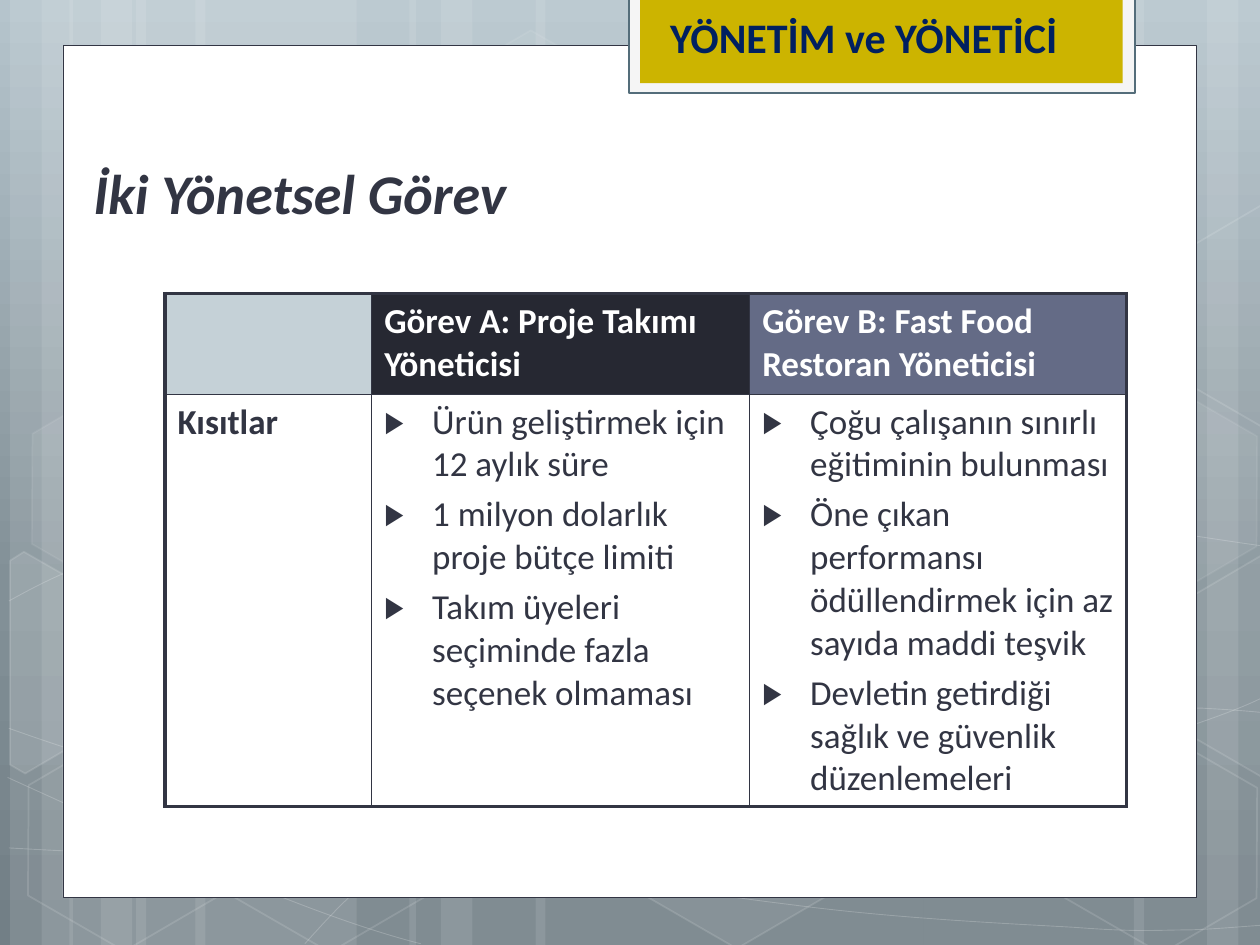
from copy import deepcopy

from lxml import etree
from pptx import Presentation
from pptx import util as u
from pptx.dml.color import RGBColor
from pptx.enum import shapes, text
from pptx.oxml.ns import qn

PX = 9144  # EMU per px, 100 px to the inch
FONT = "Calibri"
COLORS = {
    "white": "FFFFFF", "ink": "323543", "navy": "002060", "gold": "CCB400",
    "frame": "F5F5F5", "frame_line": "546D7A", "corner": "C5D1D7",
    "task_a": "262832", "task_b": "646B86",
}
BACKDROP = [(0, "B5C4CC"), (0.62, "829097"), (1, "727F86")]

# Vertical bands: left, width
BANDS = [(108, 175), (8, 50), (33, 83), (155, 175), (55, 50), (80, 83),
         (733, 175), (958, 50), (900, 83), (425, 308), (325, 50), (350, 83)]
# Curves: start point, then three Bezier points per segment
CURVES = [
    [(7, 673), (61, 676), (115, 679), (190, 678), (265, 677), (358, 675), (458, 665),
     (558, 655), (700, 636), (792, 617), (883, 598), (977, 568), (1007, 551)],
    [(7, 477), (36, 461), (65, 446), (121, 431), (178, 416), (259, 394), (347, 387),
     (436, 380), (544, 379), (654, 387), (764, 395), (947, 426), (1007, 434)],
    [(6, 617), (127, 672), (247, 727), (334, 749)],
    [(7, 578), (38, 589), (70, 600), (128, 616), (186, 631), (273, 656), (357, 673),
     (440, 690), (545, 708), (628, 718), (711, 729), (800, 733), (853, 736),
     (905, 740), (919, 738), (945, 738), (971, 737), (989, 735), (1007, 734)],
    [(242, 749), (260, 729), (278, 709), (302, 691), (326, 673), (360, 653), (388, 639),
     (416, 625), (433, 619), (470, 609), (506, 599), (573, 585), (608, 578),
     (644, 571), (649, 571), (680, 569), (711, 566), (760, 563), (794, 562),
     (829, 561), (886, 562), (886, 562), (908, 562), (931, 562), (953, 562),
     (971, 563), (988, 564), (1006, 566)],
]
# Hexagons: left, top, fill opacity, line opacity
HEXAGONS = [(334, 36, 4, 8), (497, 589, 6, 12), (11, 591, 0, 12), (14, 312, 7, 8),
            (174, 592, 0, 12), (753, 453, 10, 12), (834, 593, 0, 12), (834, 314, 7, 8)]
# Hexagons cut by the slide edge: points, fill opacity
CUT_HEXAGONS = [
    ([(8, 445), (19, 438), (96, 482), (95, 570), (20, 614), (8, 607)], 10),
    ([(926, 485), (1001, 441), (1009, 446), (1009, 613), (1002, 617), (926, 573)], 4),
    ([(926, 207), (1001, 163), (1010, 168), (1009, 335), (1002, 339), (926, 295)], 0),
]

TASKS = ["Görev A: Proje Takımı Yöneticisi", "Görev B: Fast Food Restoran Yöneticisi"]
CONSTRAINTS = [
    ["Ürün geliştirmek için 12 aylık süre",
     "1 milyon dolarlık proje bütçe limiti",
     "Takım üyeleri seçiminde fazla seçenek olmaması"],
    ["Çoğu çalışanın sınırlı eğitiminin bulunması",
     "Öne çıkan performansı ödüllendirmek için az sayıda maddi teşvik",
     "Devletin getirdiği sağlık ve güvenlik düzenlemeleri"],
]


def rgb(name):
    return RGBColor.from_string(COLORS[name])


def box(*lengths):
    return [length * PX for length in lengths]


def assign(target, values):
    for name, value in values.items():
        setattr(target, name, value)


def fade(parent, opacity):
    for color in parent.iter(qn("a:srgbClr")):
        etree.SubElement(color, qn("a:alpha"), val=str(opacity * 1000))


def paint(shape, fill=None, line=None, width=1, fill_opacity=100, line_opacity=100):
    shape.shadow.inherit = False
    props = shape._element.spPr
    if fill and fill_opacity:
        shape.fill.solid()
        shape.fill.fore_color.rgb = rgb(fill)
        if fill_opacity < 100:
            fade(props.find(qn("a:solidFill")), fill_opacity)
    else:
        shape.fill.background()
    if line:
        shape.line.color.rgb = rgb(line)
        shape.line.width = u.Pt(width)
        if line_opacity < 100:
            fade(props.find(qn("a:ln")), line_opacity)
    else:
        shape.line.fill.background()


def add_preset(slide, kind, bounds, **look):
    shape = slide.shapes.add_shape(kind, *box(*bounds))
    paint(shape, **look)
    return shape


def add_outline(slide, points, close, **look):
    builder = slide.shapes.build_freeform(*points[0], scale=PX)
    builder.add_line_segments(points[1:], close=close)
    outline = builder.convert_to_shape()
    paint(outline, **look)
    return outline


def add_curve(slide, knots, **look):
    curve = add_outline(slide, knots, False, **look)
    steps = list(curve._element.iter(qn("a:lnTo")))
    for i in range(0, len(steps), 3):  # three points make one Bezier segment
        bezier = etree.Element(qn("a:cubicBezTo"))
        steps[i].addprevious(bezier)
        for step in steps[i:i + 3]:
            bezier.append(step[0])
            step.getparent().remove(step)


def write(paragraph, words, size, color, **style):
    run = paragraph.add_run()
    run.text = words
    assign(run.font, {"name": FONT, "size": u.Pt(size), **style})
    run.font.color.rgb = rgb(color)


def add_backdrop(slide):
    fill = slide.background.fill
    fill.gradient()
    fill.gradient_angle = 270
    stops = slide._element.find(".//" + qn("a:gsLst"))
    stops.append(deepcopy(stops[-1]))
    for stop, (position, color) in zip(fill.gradient_stops, BACKDROP):
        stop.position = position
        stop.color.rgb = RGBColor.from_string(color)


def add_decoration(slide):
    for left, width in BANDS:
        add_preset(slide, shapes.MSO_SHAPE.RECTANGLE, (left, 0, width, 750),
                   fill="white", fill_opacity=10)
    for knots in CURVES:
        add_curve(slide, knots, line="white", width=0.5, line_opacity=20)
    for left, top, fill_opacity, line_opacity in HEXAGONS:
        hexagon = add_preset(slide, shapes.MSO_SHAPE.HEXAGON, (left, top, 175, 152),
                             fill="white", fill_opacity=fill_opacity,
                             line="white", line_opacity=line_opacity)
        hexagon.adjustments[0] = 0.285
        hexagon.rotation = 30
    for points, fill_opacity in CUT_HEXAGONS:
        add_outline(slide, points, True, fill="white", fill_opacity=fill_opacity,
                    line="white", line_opacity=12)


def add_banner(slide):
    rectangle = shapes.MSO_SHAPE.RECTANGLE
    add_preset(slide, rectangle, (499, -2, 402, 76),
               fill="frame", line="frame_line", width=1.25)
    add_preset(slide, rectangle, (508, -2, 383, 68), fill="gold")
    banner = slide.shapes.add_textbox(*box(522, 4, 349, 101)).text_frame
    banner.word_wrap = True
    write(banner.paragraphs[0], "YÖNETİM ve YÖNETİCİ", 24, "navy", bold=True)


def format_title(slide):
    title = slide.shapes.title
    slide.shapes._spTree.append(title._element)  # in front of the panel
    assign(title, dict(zip(("left", "top", "width", "height"), box(64, 105, 822, 79))))
    assign(title.text_frame, {"vertical_anchor": text.MSO_ANCHOR.BOTTOM,
                              "auto_size": text.MSO_AUTO_SIZE.NONE, "word_wrap": True})
    heading = title.text_frame.paragraphs[0]
    heading.alignment = text.PP_ALIGN.LEFT
    write(heading, "İki Yönetsel Görev", 32, "ink", bold=True, italic=True)


def add_bullet(paragraph):
    props = paragraph._p.get_or_add_pPr()
    props.set("marL", str(38 * PX))
    props.set("indent", str(-38 * PX))
    color = etree.SubElement(props, qn("a:buClr"))
    etree.SubElement(color, qn("a:srgbClr"), val=COLORS["ink"])
    etree.SubElement(props, qn("a:buSzPct"), val="85000")
    etree.SubElement(props, qn("a:buFont"), typeface=FONT)
    etree.SubElement(props, qn("a:buChar"), char="▶")


def add_borders(cell, outer_sides):
    props = cell._tc.get_or_add_tcPr()
    for side in "LRTB":
        width = u.Pt(2.25 if side in outer_sides else 1)
        line = etree.SubElement(props, qn("a:ln" + side), w=str(width))
        fill = etree.SubElement(line, qn("a:solidFill"))
        etree.SubElement(fill, qn("a:srgbClr"), val=COLORS["ink"])


def fill_cell(cell, lines, color, fill=None, bold=False, bullets=False):
    if fill:
        cell.fill.solid()
        cell.fill.fore_color.rgb = rgb(fill)
    else:
        cell.fill.background()
    frame = cell.text_frame
    for i, words in enumerate(lines):
        paragraph = frame.add_paragraph() if i else frame.paragraphs[0]
        paragraph.space_before = u.Pt(4)
        if bullets:
            add_bullet(paragraph)
        write(paragraph, words, 20, color, bold=bold)


def add_task_table(slide):
    table = slide.shapes.add_table(2, 3, *box(131, 233, 763, 403)).table
    assign(table, {"first_row": False, "horz_banding": False})
    for column, width in zip(table.columns, (164, 300, 299)):
        column.width = width * PX
    for row, height in zip(table.rows, (80, 323)):
        row.height = height * PX
    for r in range(2):
        for c in range(3):
            add_borders(table.cell(r, c), "TB"[r] + ("L", "", "R")[c])
    fill_cell(table.cell(0, 0), [], "ink", fill="corner")
    fill_cell(table.cell(1, 0), ["Kısıtlar"], "ink", bold=True)
    for c, (task, fill) in enumerate(zip(TASKS, ("task_a", "task_b")), 1):
        fill_cell(table.cell(0, c), [task], "white", fill=fill, bold=True)
        fill_cell(table.cell(1, c), CONSTRAINTS[c - 1], "ink", bullets=True)


def main():
    deck = Presentation()
    assign(deck, {"slide_width": 1000 * PX, "slide_height": 750 * PX})
    slide = deck.slides.add_slide(deck.slide_layouts[5])
    add_backdrop(slide)
    add_decoration(slide)
    # White content panel
    add_preset(slide, shapes.MSO_SHAPE.RECTANGLE, (50, 36, 900, 676),
               fill="white", line="ink", width=0.5)
    add_banner(slide)
    format_title(slide)
    add_task_table(slide)
    deck.save("out.pptx")


if __name__ == "__main__":
    main()
